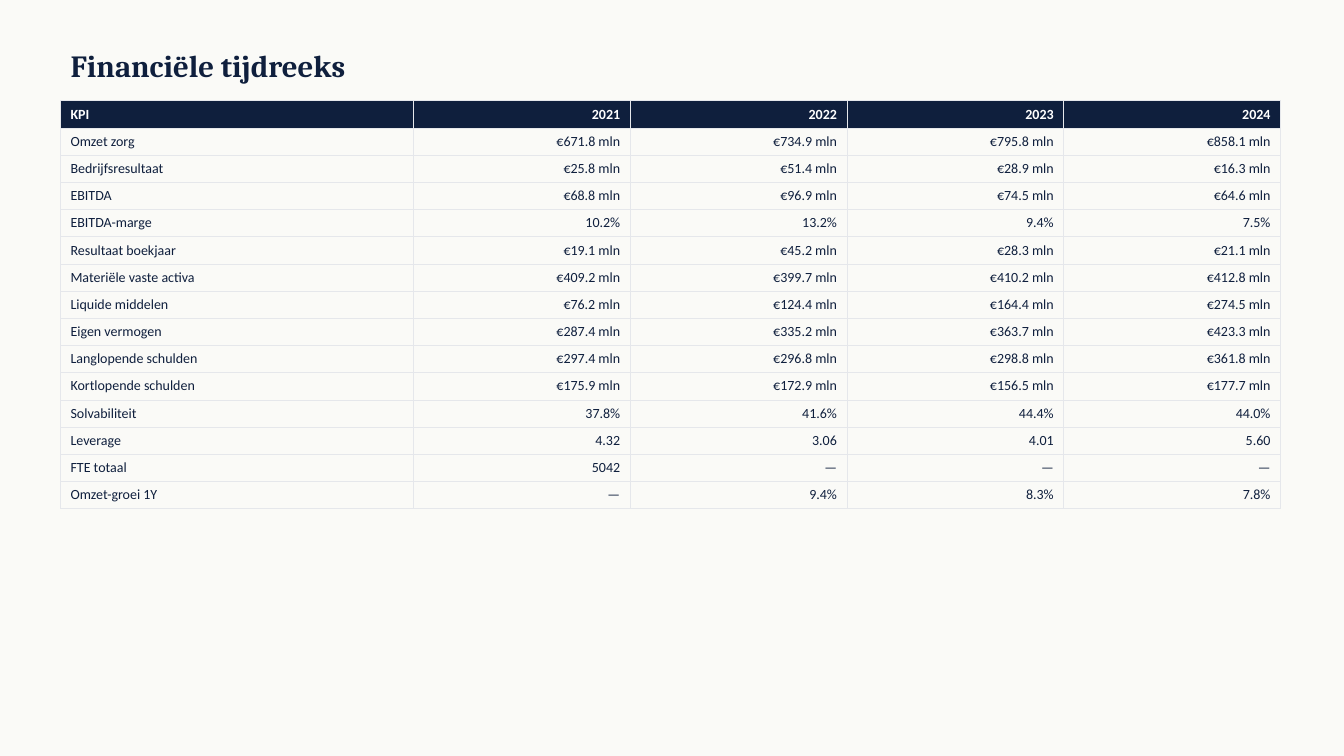
from lxml import etree
from pptx import Presentation
from pptx.dml.color import RGBColor
from pptx.enum.text import MSO_ANCHOR, PP_ALIGN
from pptx.oxml.ns import qn
from pptx.util import Inches, Pt

LEFT, RIGHT = PP_ALIGN.LEFT, PP_ALIGN.RIGHT
MIDDLE = MSO_ANCHOR.MIDDLE

PAPER = RGBColor(0xFA, 0xFA, 0xF7)
NAVY = RGBColor(0x0F, 0x1F, 0x3D)
WHITE = RGBColor(0xFF, 0xFF, 0xFF)
GRID = RGBColor(0xE5, 0xE7, 0xEB)

TITLE = "Financiële tijdreeks"
ROWS = [
    ("KPI", "2021", "2022", "2023", "2024"),
    ("Omzet zorg", "€671.8 mln", "€734.9 mln", "€795.8 mln", "€858.1 mln"),
    ("Bedrijfsresultaat", "€25.8 mln", "€51.4 mln", "€28.9 mln", "€16.3 mln"),
    ("EBITDA", "€68.8 mln", "€96.9 mln", "€74.5 mln", "€64.6 mln"),
    ("EBITDA-marge", "10.2%", "13.2%", "9.4%", "7.5%"),
    ("Resultaat boekjaar", "€19.1 mln", "€45.2 mln", "€28.3 mln", "€21.1 mln"),
    ("Materiële vaste activa", "€409.2 mln", "€399.7 mln", "€410.2 mln", "€412.8 mln"),
    ("Liquide middelen", "€76.2 mln", "€124.4 mln", "€164.4 mln", "€274.5 mln"),
    ("Eigen vermogen", "€287.4 mln", "€335.2 mln", "€363.7 mln", "€423.3 mln"),
    ("Langlopende schulden", "€297.4 mln", "€296.8 mln", "€298.8 mln", "€361.8 mln"),
    ("Kortlopende schulden", "€175.9 mln", "€172.9 mln", "€156.5 mln", "€177.7 mln"),
    ("Solvabiliteit", "37.8%", "41.6%", "44.4%", "44.0%"),
    ("Leverage", "4.32", "3.06", "4.01", "5.60"),
    ("FTE totaal", "5042", "—", "—", "—"),
    ("Omzet-groei 1Y", "—", "9.4%", "8.3%", "7.8%"),
]
COL_WIDTHS = [3.5] + [2.15] * 4
ROW_HEIGHT = 0.27


def write(tf, text, size=10, font="Calibri", color=NAVY, bold=False, align=LEFT):
    p = tf.paragraphs[0]
    p.alignment = align
    r = p.add_run()
    r.text = text
    r.font.size = Pt(size)
    r.font.name = font
    r.font.bold = bold
    r.font.color.rgb = color


def add_borders(cell, color, width):
    """Draw all four cell edges; call before setting the cell fill."""
    tc_pr = cell._tc.get_or_add_tcPr()
    for edge in ("a:lnL", "a:lnR", "a:lnT", "a:lnB"):
        ln = etree.SubElement(tc_pr, qn(edge), w=str(Pt(width)))
        fill = etree.SubElement(ln, qn("a:solidFill"))
        etree.SubElement(fill, qn("a:srgbClr"), val=str(color))


def add_kpi_table(s):
    frame = s.shapes.add_table(
        len(ROWS), len(COL_WIDTHS), Inches(0.6), Inches(1),
        Inches(sum(COL_WIDTHS)), Inches(ROW_HEIGHT * len(ROWS)))
    table = frame.table
    table.first_row = table.horz_banding = False
    for column, width in zip(table.columns, COL_WIDTHS):
        column.width = Inches(width)
    for i, values in enumerate(ROWS):
        table.rows[i].height = Inches(ROW_HEIGHT)
        header = i == 0
        for j, value in enumerate(values):
            cell = table.cell(i, j)
            add_borders(cell, GRID, 0.5)
            if header:
                cell.fill.solid()
                cell.fill.fore_color.rgb = NAVY
            else:
                cell.fill.background()
            write(cell.text_frame, value, bold=header,
                  color=WHITE if header else NAVY, align=RIGHT if j else LEFT)


def main():
    prs = Presentation()
    prs.slide_width, prs.slide_height = Inches(13.33), Inches(7.5)
    s = prs.slides.add_slide(prs.slide_layouts[5])
    s.background.fill.solid()
    s.background.fill.fore_color.rgb = PAPER

    title = s.shapes.title
    title.left, title.top = Inches(0.6), Inches(0.4)
    title.width, title.height = Inches(12), Inches(0.5)
    title.text_frame.vertical_anchor = MIDDLE
    write(title.text_frame, TITLE, size=22, font="Cambria", bold=True)

    add_kpi_table(s)
    prs.save("out.pptx")


if __name__ == "__main__":
    main()
